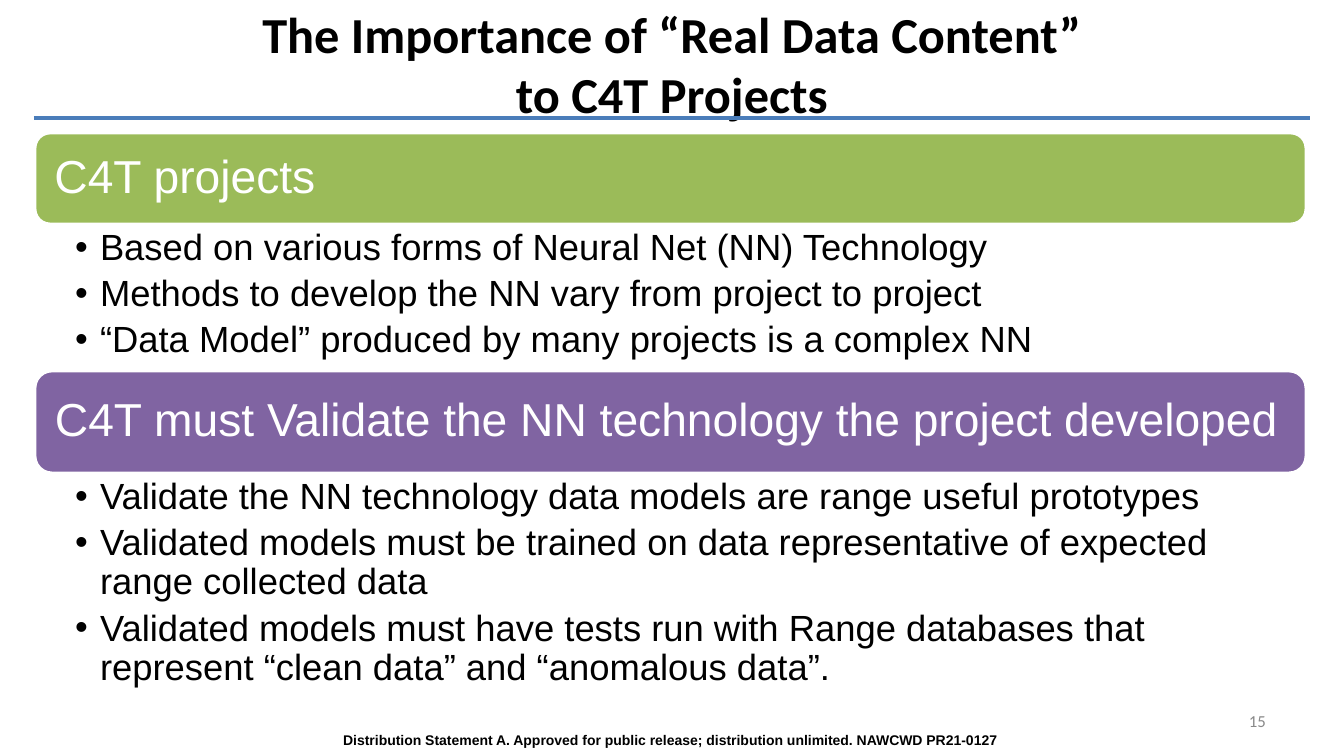
from lxml import etree
from pptx import Presentation
from pptx import util as u
from pptx.dml.color import RGBColor
from pptx.enum import shapes, text
from pptx.oxml.ns import qn

TITLE = "The Importance of “Real Data Content”\vto C4T Projects"
SECTIONS = [
    {
        "heading": "C4T projects",
        "color": "9BBB59",
        "top": 133,
        "bar_height": 91,
        "list_height": 148,
        "points": [
            "Based on various forms of Neural Net (NN) Technology",
            "Methods to develop the NN vary from project to project",
            "“Data Model” produced by many projects is a complex NN",
        ],
    },
    {
        "heading": "C4T must Validate the NN technology the project developed",
        "color": "8064A2",
        "top": 371,
        "bar_height": 102,
        "list_height": 224,
        "points": [
            "Validate the NN technology data models are range useful prototypes",
            "Validated models must be trained on data representative of expected range collected data",
            "Validated models must have tests run with Range databases that represent “clean data” and “anomalous data”.",
        ],
    },
]
FOOTER = "Distribution Statement A. Approved for public release; distribution unlimited. NAWCWD PR21-0127"
PAGE_NUMBER = "15"

WIDTH, HEIGHT = 1344, 756
LEFT, CONTENT_WIDTH = 35, 1271
ALIGN, ANCHOR = text.PP_ALIGN, text.MSO_ANCHOR


def px(value):
    return u.Emu(round(value * 914400 / 100.8))


def rgb(value):
    return RGBColor.from_string(value)


def place(shape, left, top, width, height):
    shape.left, shape.top, shape.width, shape.height = map(px, (left, top, width, height))


def set_frame(shape, anchor, left=10, top=5, right=10, bottom=5):
    frame = shape.text_frame
    frame.word_wrap = True
    frame.auto_size = text.MSO_AUTO_SIZE.NONE
    frame.vertical_anchor = anchor
    frame.margin_left, frame.margin_top = px(left), px(top)
    frame.margin_right, frame.margin_bottom = px(right), px(bottom)
    return frame


def style(paragraph, size, color, font="Arial", align=ALIGN.LEFT, bold=False):
    paragraph.alignment = align
    paragraph.font.name = font
    paragraph.font.size = u.Pt(size)
    paragraph.font.bold = bold
    paragraph.font.color.rgb = rgb(color)


def add_label(slide, box, content, anchor, **look):
    label = slide.shapes.add_textbox(*map(px, box))
    frame = set_frame(label, anchor)
    frame.text = content
    style(frame.paragraphs[0], **look)


def add_heading(slide, section):
    bar = slide.shapes.add_shape(
        shapes.MSO_SHAPE.ROUNDED_RECTANGLE,
        *map(px, (LEFT, section["top"], CONTENT_WIDTH, section["bar_height"])),
    )
    bar.shadow.inherit = False
    bar.fill.solid()
    bar.fill.fore_color.rgb = rgb(section["color"])
    bar.line.color.rgb = rgb("FFFFFF")
    bar.line.width = u.Pt(2)
    frame = set_frame(bar, ANCHOR.MIDDLE, left=15, right=15)
    frame.text = section["heading"]
    paragraph = frame.paragraphs[0]
    paragraph.line_spacing = 0.9
    style(paragraph, 33, "FFFFFF")


def fill_list(body, section):
    place(body, LEFT, section["top"] + section["bar_height"], CONTENT_WIDTH, section["list_height"])
    frame = set_frame(body, ANCHOR.TOP, left=40, right=26)
    frame.text = "\n".join(section["points"])
    for paragraph in frame.paragraphs:
        properties = paragraph._p.get_or_add_pPr()
        properties.set("marL", str(px(25)))
        properties.set("indent", str(px(-25)))
        paragraph.line_spacing = 0.9
        paragraph.space_before = u.Pt(0)
        paragraph.space_after = u.Pt(5)
        etree.SubElement(properties, qn("a:buChar"), char="•")
        style(paragraph, 26, "000000")


def main():
    presentation = Presentation()
    presentation.slide_width, presentation.slide_height = px(WIDTH), px(HEIGHT)
    slide = presentation.slides.add_slide(presentation.slide_layouts.get_by_name("Two Content"))

    rule = slide.shapes.add_connector(shapes.MSO_CONNECTOR.STRAIGHT, *map(px, (34, 118, 1310, 118)))
    rule.line.color.rgb = rgb("4A7DBA")
    rule.line.width = u.Pt(2.25)
    etree.SubElement(rule._element.spPr, qn("a:effectLst"))

    title, *bodies = slide.placeholders
    place(title, 0, 13, WIDTH, 101)
    frame = set_frame(title, ANCHOR.MIDDLE)
    frame.text = TITLE
    style(frame.paragraphs[0], 36, "000000", "Calibri", ALIGN.CENTER, True)

    for section, body in zip(SECTIONS, bodies):
        add_heading(slide, section)
        fill_list(body, section)

    add_label(slide, (15, 727, 1310, 27), FOOTER, ANCHOR.TOP,
              size=10, color="000000", align=ALIGN.CENTER, bold=True)
    add_label(slide, (1230, 701, 46, 40), PAGE_NUMBER, ANCHOR.MIDDLE,
              size=12, color="898989", font="Calibri", align=ALIGN.RIGHT)
    presentation.save("out.pptx")


if __name__ == "__main__":
    main()
